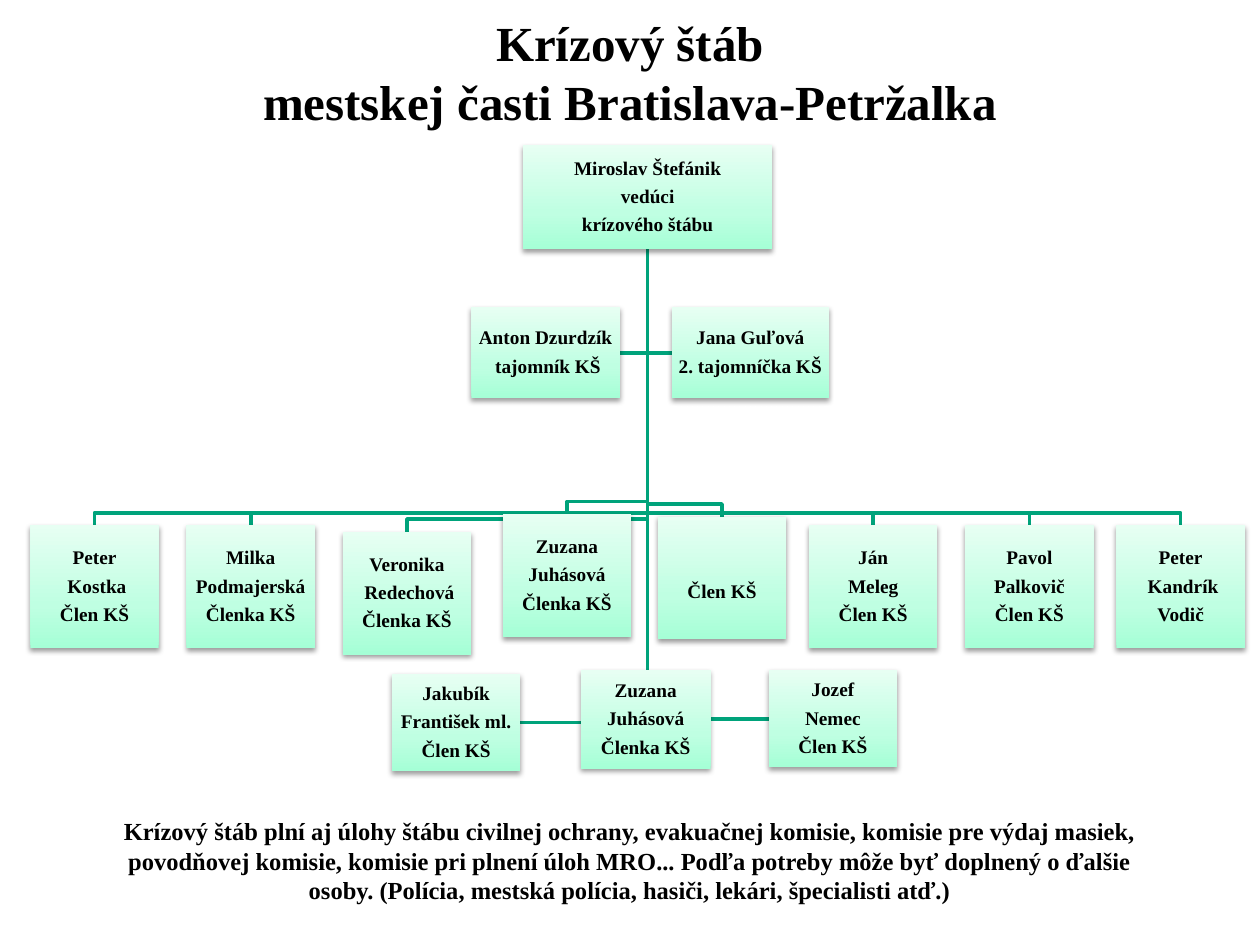
"""Build the crisis staff organisation chart on a grid of 100 columns by 75 rows."""
from dataclasses import dataclass

from lxml import etree
from pptx import Presentation
from pptx import util as u
from pptx.dml.color import RGBColor
from pptx.enum import shapes, text

W, H = u.Inches(10), u.Inches(7.5)
COLS, ROWS = 100, 75
NS = "http://schemas.openxmlformats.org/drawingml/2006/main"


@dataclass(frozen=True)
class Theme:
    """Hold the colours, font and type sizes of the slide."""
    font: str = "Times New Roman"
    ink: str = "000000"
    line: str = "00A37B"
    stops: tuple = ((0, "A5FFD6"), (35, "BFFFE2"), (100, "E7FFF3"))
    title: float = 28
    box: float = 11
    note: float = 14
    rule: float = 2
    gap: float = 4.3


T = Theme()
TRUNK = 51.4
HEAD = (41.5, 11.5, 19.8, 8.3, "Miroslav Štefánik\nvedúci\nkrízového štábu")
SECRETARIES = [
    (37.4, 24.4, 11.8, 7.2, "Anton Dzurdzík\n tajomník KŠ"),
    (53.3, 24.4, 12.5, 7.2, "Jana Guľová\n2. tajomníčka KŠ"),
]
MEMBERS = [
    (2.4, 41.7, "Peter\n Kostka\nČlen KŠ"),
    (14.8, 41.7, "Milka\nPodmajerská\nČlenka KŠ"),
    (27.2, 42.2, "Veronika\n Redechová\nČlenka KŠ"),
    (39.9, 40.8, "Zuzana\nJuhásová\nČlenka KŠ"),
    (52.2, 41, "Člen KŠ"),
    (64.2, 41.7, "Ján\nMeleg\nČlen KŠ"),
    (76.6, 41.7, "Pavol\nPalkovič\nČlen KŠ"),
    (88.6, 41.7, "Peter\n Kandrík\nVodič"),
]
DEPUTIES = [
    (31.1, 53.5, 10.2, 7.7, "Jakubík\nFrantišek ml.\nČlen KŠ"),
    (61, 53.2, 10.2, 7.7, "Jozef\nNemec\nČlen KŠ"),
]
CENTRE = (46.1, 53.2, 10.3, 7.8, "Zuzana\nJuhásová\nČlenka KŠ")
MEMBER_SIZE = (10.2, 9.75)
NOTE = ("Krízový štáb plní aj úlohy štábu civilnej ochrany, evakuačnej komisie, "
        "komisie pre výdaj masiek, povodňovej komisie, komisie pri plnení úloh MRO... "
        "Podľa potreby môže byť doplnený o ďalšie osoby. "
        "(Polícia, mestská polícia, hasiči, lekári, špecialisti atď.)")


def col(n):
    """Return the length of n grid columns."""
    return u.Emu(round(W * n / COLS))


def row(n):
    """Return the length of n grid rows."""
    return u.Emu(round(H * n / ROWS))


def write(tf, words, size):
    """Fill a text frame with bold centred paragraphs."""
    tf.word_wrap = True
    tf.text = words
    for p in tf.paragraphs:
        p.alignment = text.PP_ALIGN.CENTER
        p.font.name, p.font.size, p.font.bold = T.font, u.Pt(size), True
        p.font.color.rgb = RGBColor.from_string(T.ink)


def add_text(s, x, y, w, h, words, size, anchor):
    """Add a text box."""
    tf = s.shapes.add_textbox(col(x), row(y), col(w), row(h)).text_frame
    tf.vertical_anchor = anchor
    write(tf, words, size)


def paint(sp):
    """Give a box its gradient, no outline and a soft shadow."""
    stops = "".join(f'<a:gs pos="{pos * 1000}"><a:srgbClr val="{c}"/></a:gs>'
                    for pos, c in T.stops)
    xml = (f'<a:box xmlns:a="{NS}"><a:gradFill rotWithShape="1"><a:gsLst>{stops}</a:gsLst>'
           '<a:lin ang="16200000" scaled="1"/></a:gradFill><a:ln><a:noFill/></a:ln>'
           '<a:effectLst><a:outerShdw blurRad="39400" dist="20300" dir="5400000" '
           'rotWithShape="0"><a:srgbClr val="000000"><a:alpha val="38000"/></a:srgbClr>'
           '</a:outerShdw></a:effectLst></a:box>')
    for child in list(etree.fromstring(xml)):
        sp._element.spPr.append(child)


def add_box(s, x, y, w, h, words, drop=0.1):
    """Add one staff box with its lines of text."""
    sp = s.shapes.add_shape(shapes.MSO_SHAPE.RECTANGLE, col(x), row(y), col(w), row(h))
    paint(sp)
    tf = sp.text_frame
    tf.margin_left = tf.margin_right = col(0.1)
    tf.margin_top, tf.margin_bottom = row(drop), row(0.1)
    tf.vertical_anchor = text.MSO_ANCHOR.MIDDLE
    write(tf, words, T.box)
    for p in tf.paragraphs:
        p.line_spacing, p.space_after = 0.9, u.Pt(T.gap)


def add_branch(s, *points):
    """Draw an open line from the foot of the head box through the points."""
    start = (TRUNK, HEAD[1] + HEAD[3])
    fb = s.shapes.build_freeform(col(start[0]), row(start[1]), scale=1.0)
    fb.add_line_segments([(col(x), row(y)) for x, y in points], close=False)
    sp = fb.convert_to_shape()
    sp.fill.background()
    sp.line.color.rgb = RGBColor.from_string(T.line)
    sp.line.width = u.Pt(T.rule)
    sp.shadow.inherit = False


def branch_to_side(s, x, y, w, h):
    """Lead a branch to the side of a box that faces the trunk."""
    mid = y + h / 2
    add_branch(s, (TRUNK, mid), (x if x > TRUNK else x + w, mid))


def branch_to_top(s, x, y, w):
    """Lead a branch to the top centre of a box."""
    bus, mid = y - 1, x + w / 2
    add_branch(s, (TRUNK, bus), (mid, bus), (mid, y))


def main():
    """Build and save the slide."""
    prs = Presentation()
    prs.slide_width, prs.slide_height = W, H
    s = prs.slides.add_slide(prs.slide_layouts[6])
    add_text(s, 7.5, 1.3, 85, 8.7, "Krízový štáb\vmestskej časti Bratislava-Petržalka",
             T.title, text.MSO_ANCHOR.MIDDLE)
    for *place, _ in DEPUTIES + SECRETARIES:
        branch_to_side(s, *place)
    for x, y, _ in MEMBERS:
        branch_to_top(s, x, y, MEMBER_SIZE[0])
    add_box(s, *HEAD)
    for x, y, words in MEMBERS:
        add_box(s, x, y, *MEMBER_SIZE, words, drop=0.1 if "\n" in words else 2.3)
    for box in SECRETARIES + DEPUTIES + [CENTRE]:
        add_box(s, *box)
    add_text(s, 7.5, 64.3, 85, 8.1, NOTE, T.note, text.MSO_ANCHOR.TOP)
    prs.save("out.pptx")


if __name__ == "__main__":
    main()
